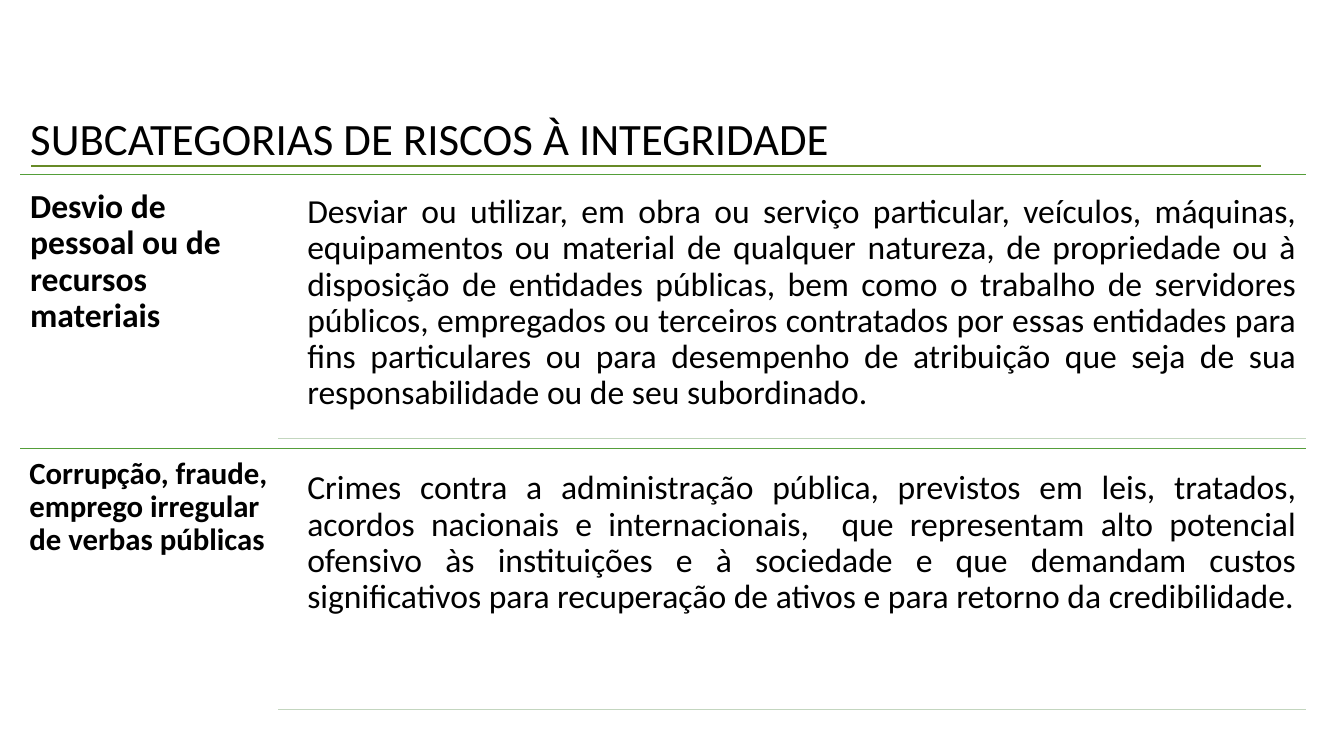
from lxml import etree
from pptx import Presentation
from pptx import util as u
from pptx.dml import color
from pptx.enum import shapes, text
from pptx.oxml import ns

TITLE = "SUBCATEGORIAS DE RISCOS À INTEGRIDADE"
DIVERSION = "Desvio de pessoal ou de recursos materiais"
DIVERSION_DETAIL = (
    "Desviar ou utilizar, em obra ou serviço particular, veículos, máquinas, "
    "equipamentos ou material de qualquer natureza, de propriedade ou à "
    "disposição de entidades públicas, bem como o trabalho de servidores "
    "públicos, empregados ou terceiros contratados por essas entidades para "
    "fins particulares ou para desempenho de atribuição que seja de sua "
    "responsabilidade ou de seu subordinado."
)
CORRUPTION = "Corrupção, fraude, emprego irregular de verbas públicas"
CORRUPTION_DETAIL = (
    "Crimes contra a administração pública, previstos em leis, tratados, "
    "acordos nacionais e internacionais,  que representam alto potencial "
    "ofensivo às instituições e à sociedade e que demandam custos "
    "significativos para recuperação de ativos e para retorno da credibilidade."
)


def rgb(value):
    return color.RGBColor.from_string(value)


class RiskSlide:
    font = "Calibri"
    ink = "000000"
    green = "549E39"
    pale = "C3D6BF"
    olive = "678A26"
    left, right = 14.4, 933.12
    label_width = 183.6
    detail_left = 212.4
    detail_rule_left = 198.72

    def __init__(self, presentation):
        self.slide = presentation.slides.add_slide(presentation.slide_layouts[5])

    def fill_text(self, shape, words, size, bold=False, justify=False, spacing=1.0, inset=7.2):
        frame = shape.text_frame
        frame.word_wrap = True
        frame.auto_size = text.MSO_AUTO_SIZE.NONE
        frame.vertical_anchor = text.MSO_ANCHOR.TOP
        frame.margin_left = frame.margin_right = u.Pt(inset)
        frame.margin_top = frame.margin_bottom = u.Pt(inset)
        frame.text = words
        paragraph = frame.paragraphs[0]
        paragraph.alignment = text.PP_ALIGN.JUSTIFY if justify else text.PP_ALIGN.LEFT
        paragraph.line_spacing = spacing
        paragraph.font.name = self.font
        paragraph.font.size = u.Pt(size)
        paragraph.font.bold = bold
        paragraph.font.color.rgb = rgb(self.ink)

    def title(self, words, left, top, width, height):
        shape = self.slide.shapes.title
        shape.left, shape.top = u.Pt(left), u.Pt(top)
        shape.width, shape.height = u.Pt(width), u.Pt(height)
        self.fill_text(shape, words, 32)
        frame = shape.text_frame
        frame.margin_top = frame.margin_bottom = u.Pt(3.6)
        frame.auto_size = text.MSO_AUTO_SIZE.SHAPE_TO_FIT_TEXT

    def box(self, words, left, top, width, height, size, **style):
        shape = self.slide.shapes.add_textbox(u.Pt(left), u.Pt(top), u.Pt(width), u.Pt(height))
        self.fill_text(shape, words, size, spacing=0.9, **style)

    def rule(self, left, right, y, tint, weight=1):
        line = self.slide.shapes.add_connector(
            shapes.MSO_CONNECTOR.STRAIGHT, u.Pt(left), u.Pt(y), u.Pt(right), u.Pt(y)
        )
        line.line.color.rgb = rgb(tint)
        line.line.width = u.Pt(weight)
        etree.SubElement(line.element.spPr, ns.qn("a:effectLst"))

    def category(self, label, detail, top, label_top, label_height, label_size,
                 label_inset, detail_top, bottom):
        self.rule(self.left, self.right, top, self.green)
        self.box(label, self.left, label_top, self.label_width, label_height,
                 label_size, bold=True, inset=label_inset)
        self.box(detail, self.detail_left, detail_top, self.right - self.detail_left,
                 bottom - detail_top, 24, justify=True)
        self.rule(self.detail_rule_left, self.right, bottom, self.pale)


def main():
    presentation = Presentation()
    presentation.slide_width, presentation.slide_height = u.Pt(960), u.Pt(540)
    risks = RiskSlide(presentation)
    risks.category(DIVERSION, DIVERSION_DETAIL, top=124.56, label_top=128.16,
                   label_height=96.5, label_size=24, label_inset=7.2,
                   detail_top=131.76, bottom=313.2)
    risks.category(CORRUPTION, CORRUPTION_DETAIL, top=320.4, label_top=320.4,
                   label_height=79.2, label_size=22, label_inset=6.6,
                   detail_top=329.04, bottom=506.88)
    risks.rule(22.32, 900.72, 118.8, risks.olive, 1.5)
    risks.title(TITLE, 14.4, 75.6, 879.12, 46.08)
    presentation.save("out.pptx")


if __name__ == "__main__":
    main()
